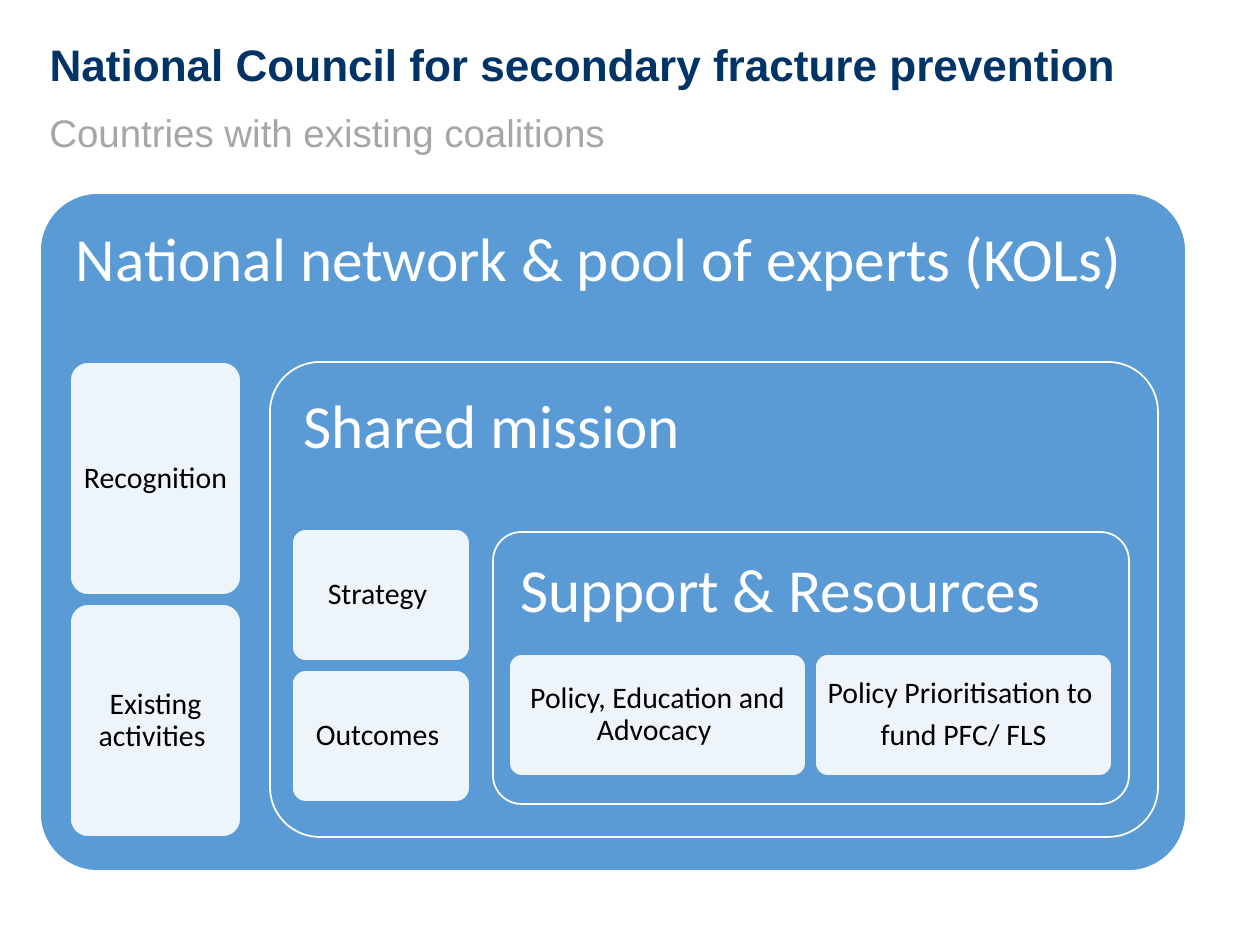
from lxml.etree import SubElement
from pptx import Presentation
from pptx.dml.color import RGBColor
from pptx.enum.shapes import MSO_SHAPE
from pptx.enum.text import MSO_ANCHOR, PP_ALIGN
from pptx.oxml.ns import qn
from pptx.util import Pt

PX = 914400 // 126
GAP = 9
COLORS = {"navy": "003366", "gray": "A6A6A6", "blue": "5B9BD5",
          "white": "FFFFFF", "black": "000000"}
HEAD = {"name": "Arial", "size": Pt(25.2), "bold": True}
SUB = {"name": "Arial", "size": Pt(22), "bold": False}
LABEL = {"name": "Calibri", "size": Pt(35)}
NOTE = {"name": "Calibri", "size": Pt(17)}


def color(key):
    return RGBColor.from_string(COLORS[key])


def place(shape, box):
    for name, val in zip(("left", "top", "width", "height"), box):
        setattr(shape, name, val * PX)


def write(shape, lines, font, ink, anchor, align, after=0, inset=None):
    frame = shape.text_frame
    frame.text = "\n".join(lines)
    frame.word_wrap = True
    frame.vertical_anchor = anchor
    if inset is not None:
        for side in ("left", "top", "right", "bottom"):
            setattr(frame, f"margin_{side}", inset * PX)
    form = {"alignment": align, "line_spacing": 0.9,
            "space_before": Pt(0), "space_after": Pt(after)}
    for para in frame.paragraphs:
        for name, val in form.items():
            setattr(para, name, val)
        for name, val in font.items():
            setattr(para.font, name, val)
        para.font.color.rgb = color(ink)


def rounded(slide, box, bend, fill, edge):
    left, top, width, height = (val * PX for val in box)
    shape = slide.shapes.add_shape(MSO_SHAPE.ROUNDED_RECTANGLE,
                                   left, top, width, height)
    shape.adjustments[0] = bend
    shape.shadow.inherit = False
    shape.fill.solid()
    shape.fill.fore_color.rgb = color(fill)
    shape.line.color.rgb = color(edge)
    shape.line.width = Pt(1)
    return shape


def tile(slide, box, lines):
    shape = rounded(slide, box, 0.105, "white", "blue")
    # Let a tenth of the panel show through
    tint = shape.fill._xPr.find(qn("a:solidFill"))[0]
    SubElement(tint, qn("a:alpha"), val="90000")
    write(shape, lines, NOTE, "black", MSO_ANCHOR.MIDDLE,
          PP_ALIGN.CENTER, after=6, inset=8)


def panel(slide, box, label, first, notes, across=False, bend=0.105):
    """Panel with a label and a row or column of tiles inside."""
    shape = rounded(slide, box, bend, "blue", "white")
    write(shape, [label], LABEL, "white", MSO_ANCHOR.TOP,
          PP_ALIGN.LEFT, inset=19)
    left, top, width, height = first
    for i, lines in enumerate(notes):
        x = box[0] + left + i * (width + GAP) * across
        y = box[1] + top + i * (height + GAP) * (not across)
        tile(slide, (x, y, width, height), lines)


def header(slide, box):
    left, top, width, height = box
    title = slide.shapes.title
    place(title, (left, top, width, 68))
    write(title, ["National Council for secondary fracture prevention"],
          HEAD, "navy", MSO_ANCHOR.BOTTOM, PP_ALIGN.LEFT)
    sub = slide.shapes.add_textbox(0, 0, PX, PX)
    place(sub, (left, top + 79, width, height - 79))
    write(sub, ["Countries with existing coalitions"],
          SUB, "gray", MSO_ANCHOR.TOP, PP_ALIGN.LEFT)


def main():
    deck = Presentation()
    deck.slide_width, deck.slide_height = 1260 * PX, 945 * PX
    slide = deck.slides.add_slide(deck.slide_layouts[5])
    header(slide, (37, 29, 1129, 148))

    # Nested panels, outermost first
    panel(slide, (40, 193, 1146, 678),
          "National network & pool of experts (KOLs)", (30, 169, 171, 233),
          [["Recognition "], ["Existing activities "]], bend=0.085)
    panel(slide, (270, 362, 888, 475), "Shared mission", (22, 167, 178, 132),
          [["Strategy "], ["Outcomes "]])
    panel(slide, (493, 532, 636, 272), "Support & Resources",
          (16, 122, 297, 122),
          [["Policy, Education and Advocacy "],
           ["Policy Prioritisation to ", "fund PFC/ FLS"]], across=True)
    deck.save("out.pptx")


if __name__ == "__main__":
    main()
